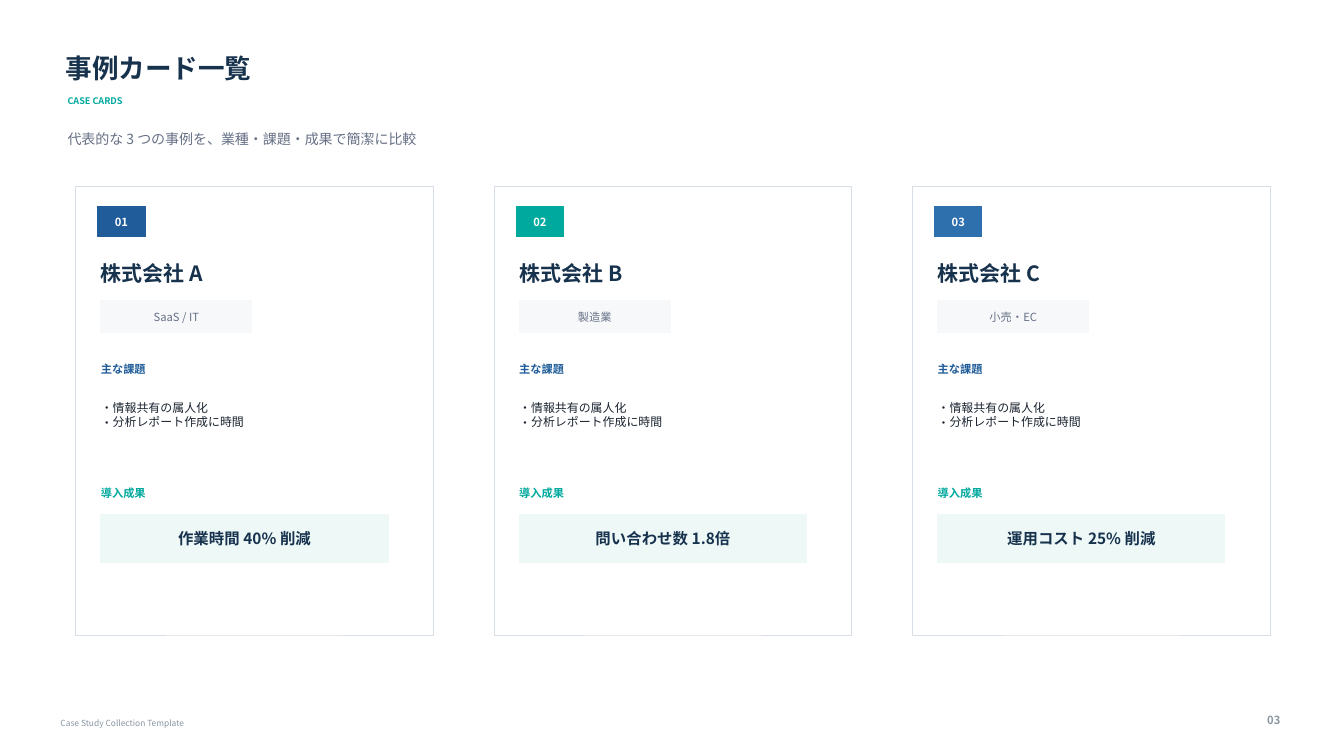
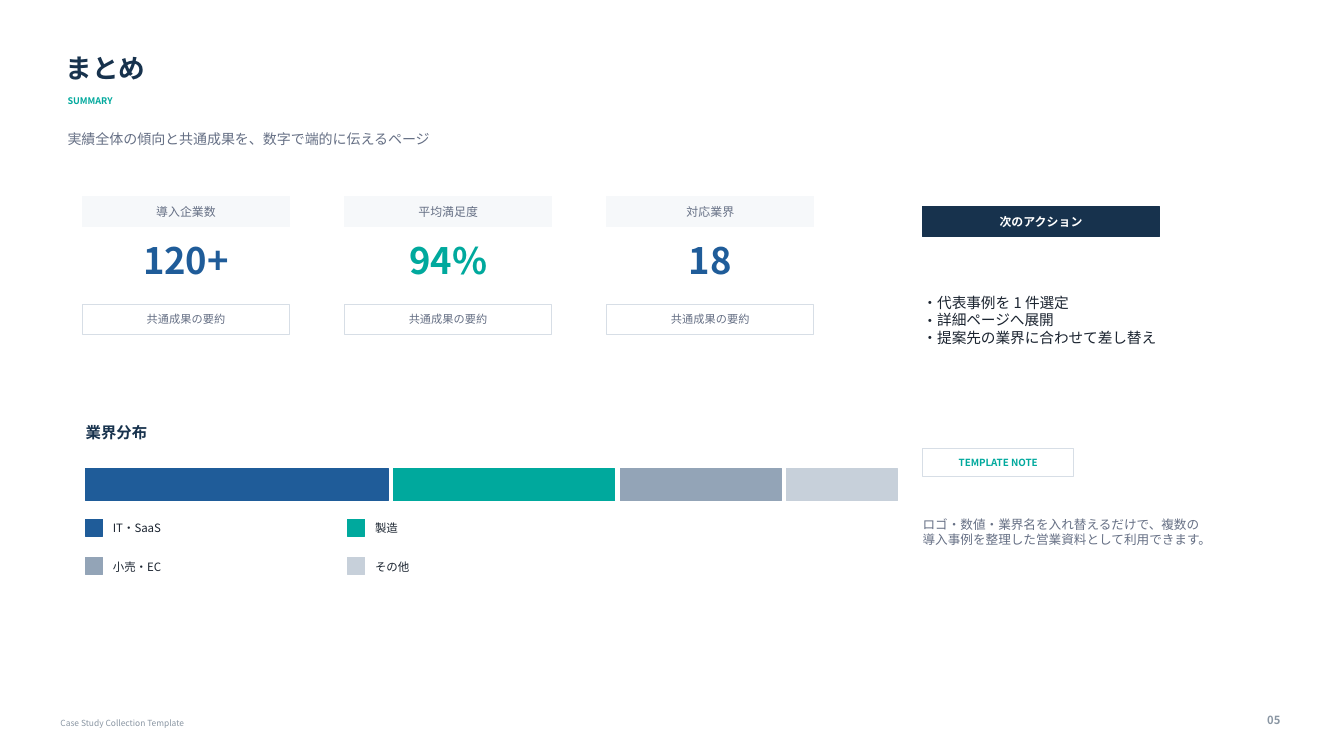
"""Build the case card overview and the summary slide of a case study deck."""
from lxml import etree
from pptx import Presentation
from pptx.dml.color import RGBColor
from pptx.enum import shapes, text
from pptx.oxml import ns
from pptx.util import Inches, Pt

FONT = "Noto Sans CJK JP"
NAVY = RGBColor(0x17, 0x32, 0x4D)
BLUE = RGBColor(0x1F, 0x5C, 0x99)
MID_BLUE = RGBColor(0x2E, 0x6F, 0xAE)
TEAL = RGBColor(0x00, 0xA9, 0x9D)
PALE_TEAL = RGBColor(0xEE, 0xF8, 0xF7)
INK = RGBColor(0x1B, 0x24, 0x30)
GRAY = RGBColor(0x66, 0x70, 0x85)
FOOTER_GRAY = RGBColor(0x8A, 0x96, 0xA3)
SLATE = RGBColor(0x93, 0xA4, 0xB7)
SILVER = RGBColor(0xC7, 0xD0, 0xDA)
BORDER = RGBColor(0xD7, 0xDE, 0xE6)
PANEL = RGBColor(0xF6, 0xF8, 0xFA)
WHITE = RGBColor(0xFF, 0xFF, 0xFF)
LEFT, CENTER, RIGHT = text.PP_ALIGN.LEFT, text.PP_ALIGN.CENTER, text.PP_ALIGN.RIGHT


def write(shape, content, size, color, bold=False, align=LEFT, bullet=False):
    """Fill a shape with uniformly formatted text, one paragraph per line."""
    frame = shape.text_frame
    frame.text = content
    frame.word_wrap = True
    frame.auto_size = text.MSO_AUTO_SIZE.NONE
    frame.vertical_anchor = text.MSO_ANCHOR.MIDDLE
    frame.margin_left = frame.margin_right = frame.margin_top = frame.margin_bottom = 0
    for paragraph in frame.paragraphs:
        paragraph.alignment = align
        paragraph.space_before = Pt(0)
        if bullet:
            properties = paragraph._p.get_or_add_pPr()
            properties.set("marL", str(Pt(size)))
            properties.set("indent", str(-Pt(size)))
            etree.SubElement(properties, ns.qn("a:buFont")).set("typeface", FONT)
            etree.SubElement(properties, ns.qn("a:buChar")).set("char", "・")
        for run in paragraph.runs:
            run.font.name = FONT
            run.font.size = Pt(size)
            run.font.bold = bold
            run.font.color.rgb = color
            east_asian = etree.SubElement(run.font._element, ns.qn("a:ea"))
            east_asian.set("typeface", FONT)


def add_box(slide, left, top, width, height, fill=None, line=None):
    """Add a text box, or a rectangle when a fill is given."""
    place = [Inches(length) for length in (left, top, width, height)]
    if fill is None:
        return slide.shapes.add_textbox(*place)
    shape = slide.shapes.add_shape(shapes.MSO_SHAPE.RECTANGLE, *place)
    shape.shadow.inherit = False
    shape.fill.solid()
    shape.fill.fore_color.rgb = fill
    shape.line.color.rgb = line or fill
    shape.line.width = Pt(0.7)
    return shape


presentation = Presentation()
presentation.slide_width = Inches(13.33)
presentation.slide_height = Inches(7.5)
title_and_content, title_only = presentation.slide_layouts[1], presentation.slide_layouts[5]

pages = [
    (title_only, "事例カード一覧", "CASE CARDS",
     "代表的な 3 つの事例を、業種・課題・成果で簡潔に比較", "03"),
    (title_and_content, "まとめ", "SUMMARY",
     "実績全体の傾向と共通成果を、数字で端的に伝えるページ", "05"),
]
for layout, heading, label, lead, number in pages:
    slide = presentation.slides.add_slide(layout)
    title = slide.shapes.title
    title.left, title.top = Inches(0.65), Inches(0.46)
    title.width, title.height = Inches(6.4), Inches(0.42)
    write(title, heading, 19, NAVY, bold=True)
    write(add_box(slide, 0.67, 0.92, 4.8, 0.17), label, 6.5, TEAL, bold=True)
    write(add_box(slide, 0.67, 1.25, 6.8, 0.25), lead, 10, GRAY)
    write(add_box(slide, 0.6, 7.08, 3.5, 0.18), "Case Study Collection Template", 6, FOOTER_GRAY)
    write(add_box(slide, 12.35, 7.02, 0.35, 0.25), number, 8, FOOTER_GRAY, bold=True, align=RIGHT)

cards_slide, summary_slide = presentation.slides

cards = [
    ("株式会社 A", "SaaS / IT", "作業時間 40% 削減", BLUE),
    ("株式会社 B", "製造業", "問い合わせ数 1.8倍", TEAL),
    ("株式会社 C", "小売・EC", "運用コスト 25% 削減", MID_BLUE),
]
for index, (company, industry, result, accent) in enumerate(cards):
    card_left = 0.75 + 4.15 * index
    left = card_left + 0.25
    add_box(cards_slide, card_left, 1.85, 3.55, 4.45, WHITE, BORDER)
    badge = add_box(cards_slide, card_left + 0.22, 2.05, 0.47, 0.3, accent)
    write(badge, f"{index + 1:02}", 8, WHITE, bold=True, align=CENTER)
    write(add_box(cards_slide, left, 2.55, 2.5, 0.32), company, 15, NAVY, bold=True)
    industry_tag = add_box(cards_slide, left, 2.98, 1.5, 0.32, PANEL)
    write(industry_tag, industry, 8, GRAY, align=CENTER)
    write(add_box(cards_slide, left, 3.55, 1.2, 0.22), "主な課題", 8, BLUE, bold=True)
    issues = add_box(cards_slide, left, 3.84, 2.8, 0.55)
    write(issues, "情報共有の属人化\n分析レポート作成に時間", 8.5, INK, bullet=True)
    write(add_box(cards_slide, left, 4.78, 1.2, 0.22), "導入成果", 8, TEAL, bold=True)
    result_band = add_box(cards_slide, left, 5.1, 2.85, 0.48, PALE_TEAL)
    write(result_band, result, 11, NAVY, bold=True, align=CENTER)

metrics = [("導入企業数", "120+", BLUE), ("平均満足度", "94%", TEAL), ("対応業界", "18", BLUE)]
for index, (name, value, color) in enumerate(metrics):
    left = 0.82 + 2.6 * index
    write(add_box(summary_slide, left, 1.95, 2.05, 0.3, PANEL), name, 8.5, GRAY, align=CENTER)
    write(add_box(summary_slide, left, 2.32, 2.05, 0.52), value, 26, color, bold=True, align=CENTER)
    caption = add_box(summary_slide, left, 3.02, 2.05, 0.3, WHITE, BORDER)
    write(caption, "共通成果の要約", 8, GRAY, align=CENTER)

write(add_box(summary_slide, 0.85, 4.15, 1.5, 0.28), "業界分布", 11, NAVY, bold=True)
industries = [("IT・SaaS", 3, BLUE), ("製造", 2.2, TEAL), ("小売・EC", 1.6, SLATE), ("その他", 1.1, SILVER)]
segment_left = 0.85
for index, (name, width, color) in enumerate(industries):
    add_box(summary_slide, segment_left, 4.65, width, 0.32, color)
    segment_left += width + 0.05
    row, column = divmod(index, 2)
    key_left, key_top = 0.85 + 2.6 * column, 5.15 + 0.38 * row
    add_box(summary_slide, key_left, key_top, 0.17, 0.17, color)
    write(add_box(summary_slide, key_left + 0.27, key_top - 0.01, 1.8, 0.2), name, 8.2, INK)

action_header = add_box(summary_slide, 9.15, 2.05, 2.35, 0.3, NAVY)
write(action_header, "次のアクション", 8.5, WHITE, bold=True, align=CENTER)
actions = summary_slide.placeholders[1]
actions.left, actions.top = Inches(9.15), Inches(2.55)
actions.width, actions.height = Inches(2.85), Inches(1.25)
write(actions, "代表事例を 1 件選定\n詳細ページへ展開\n提案先の業界に合わせて差し替え", 10.5, INK, bullet=True)

note_tag = add_box(summary_slide, 9.15, 4.45, 1.5, 0.28, WHITE, BORDER)
write(note_tag, "TEMPLATE NOTE", 7, TEAL, bold=True, align=CENTER)
note = add_box(summary_slide, 9.15, 4.9, 2.85, 0.75)
write(note, "ロゴ・数値・業界名を入れ替えるだけで、複数の導入事例を整理した営業資料として利用できます。", 9, GRAY)

presentation.save("out.pptx")
